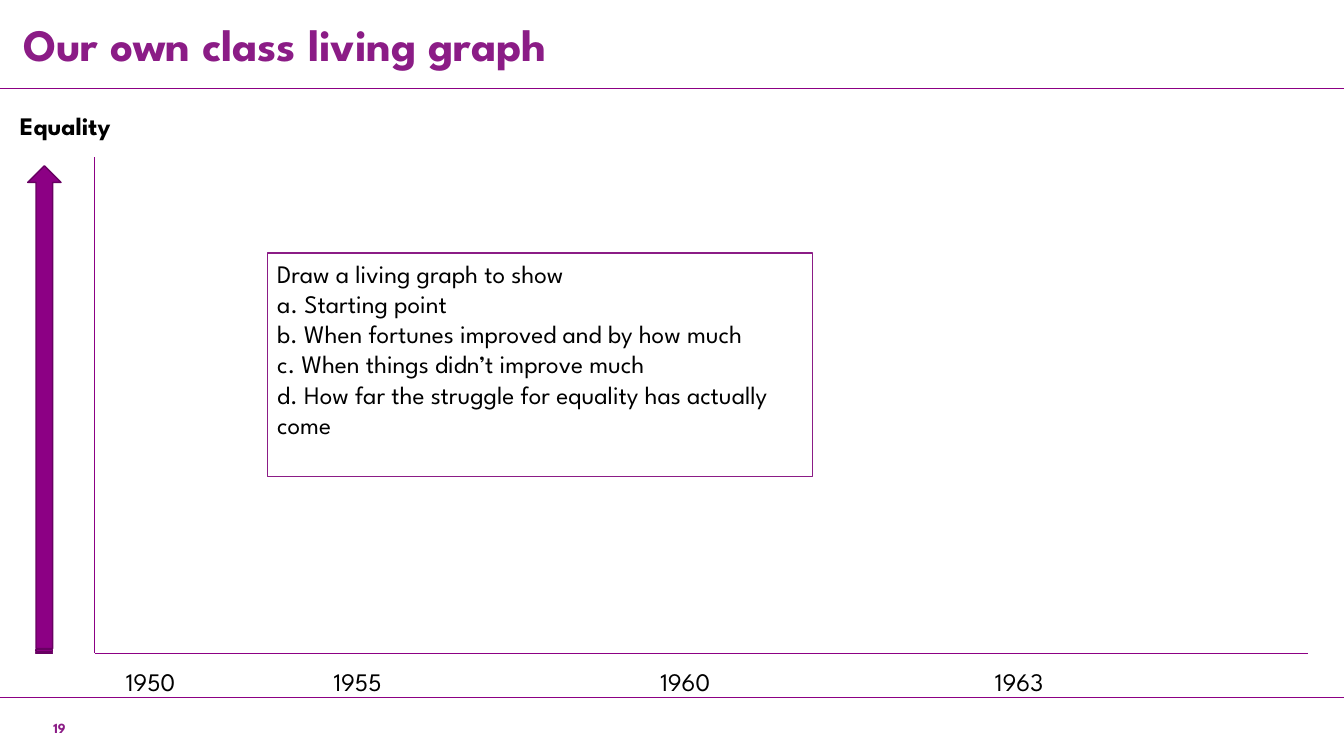
from lxml.etree import SubElement
from pptx import Presentation
from pptx.dml.color import RGBColor
from pptx.enum.shapes import MSO_CONNECTOR, MSO_SHAPE
from pptx.enum.text import MSO_ANCHOR, PP_ALIGN
from pptx.oxml.ns import qn
from pptx.util import Pt

PX = 9144  # EMU, 100 px to the inch
FONT = "League Spartan"
PURPLE, VIOLET, BLACK = "8C0084", "8B1C86", "000000"


def color(code):
    return RGBColor.from_string(code)


def style(frame, size, code, bold=False):
    """Wrap the frame and set the font of all its paragraphs."""
    frame.word_wrap = True
    for para in frame.paragraphs:
        font = para.font
        font.name, font.size, font.bold = FONT, Pt(size), bold
        font.color.rgb = color(code)


deck = Presentation()
deck.slide_width, deck.slide_height = 1333 * PX, 750 * PX
slide = deck.slides.add_slide(deck.slide_layouts[6])
shapes = slide.shapes

# Page rules, then the two axes
for ends in [(0, 692, 1333, 692), (0, 88, 1333, 88),
             (94, 156, 94, 648), (94, 648, 1297, 648)]:
    line = shapes.add_connector(MSO_CONNECTOR.STRAIGHT, *[n * PX for n in ends])
    line.line.color.rgb = color(PURPLE)
    line.line.width = Pt(0.5)
    SubElement(line._element.spPr, qn("a:effectLst"))

# Page number, title and axis label
labels = [
    ("19", (-25, 709, 100, 27), 10, VIOLET, PP_ALIGN.RIGHT, MSO_ANCHOR.TOP),
    ("Our own class living graph", (13, 14, 962, 66), 32, VIOLET,
     PP_ALIGN.LEFT, MSO_ANCHOR.MIDDLE),
    ("Equality", (10, 105, 367, 40), 18, BLACK, PP_ALIGN.LEFT, MSO_ANCHOR.TOP),
]
for text, area, size, code, align, anchor in labels:
    frame = shapes.add_textbox(*[n * PX for n in area]).text_frame
    frame.text = text
    frame.vertical_anchor = anchor
    frame.paragraphs[0].alignment = align
    frame.paragraphs[0].line_spacing = 0.9 if size == 32 else 1
    style(frame, size, code, bold=True)

# Equality arrow, turned to point up
arrow = shapes.add_shape(MSO_SHAPE.STRIPED_RIGHT_ARROW,
                         -198 * PX, 390 * PX, 484 * PX, 33 * PX)
arrow.rotation = 270
arrow.shadow.inherit = False
arrow.fill.solid()
arrow.fill.fore_color.rgb = color(PURPLE)
arrow.line.color.rgb = color("680062")
arrow.line.width = Pt(1)

# Years along the time axis, placed by tab stops
years = shapes.add_textbox(115 * PX, 656 * PX, 1211 * PX, 40 * PX).text_frame
years.text = "\t".join(["1950", "1955", "1960", "1963"])
tabs = SubElement(years.paragraphs[0]._p.get_or_add_pPr(), qn("a:tabLst"))
for stop in (206, 530, 862):
    SubElement(tabs, qn("a:tab"), pos=str(stop * PX), algn="l")
style(years, 18, BLACK)

# Task box with a lettered list
task = shapes.add_shape(MSO_SHAPE.RECTANGLE,
                        265 * PX, 251 * PX, 541 * PX, 222 * PX)
task.shadow.inherit = False
task.fill.solid()
task.fill.fore_color.rgb = color("FFFFFF")
task.line.color.rgb = color(VIOLET)
task.line.width = Pt(0.75)
frame = task.text_frame
frame.vertical_anchor = MSO_ANCHOR.TOP
frame.text = "\n".join([
    "Draw a living graph to show",
    " Starting point",
    " When fortunes improved and by how much",
    " When things didn’t improve much",
    " How far the struggle for equality has actually come",
])
for para in frame.paragraphs:
    para.alignment = PP_ALIGN.LEFT
for para in frame.paragraphs[1:]:
    props = para._p.get_or_add_pPr()
    props.set("marL", "0")
    props.set("indent", "0")
    SubElement(props, qn("a:buAutoNum"), type="alphaLcPeriod")
style(frame, 18, BLACK)

deck.save("out.pptx")
